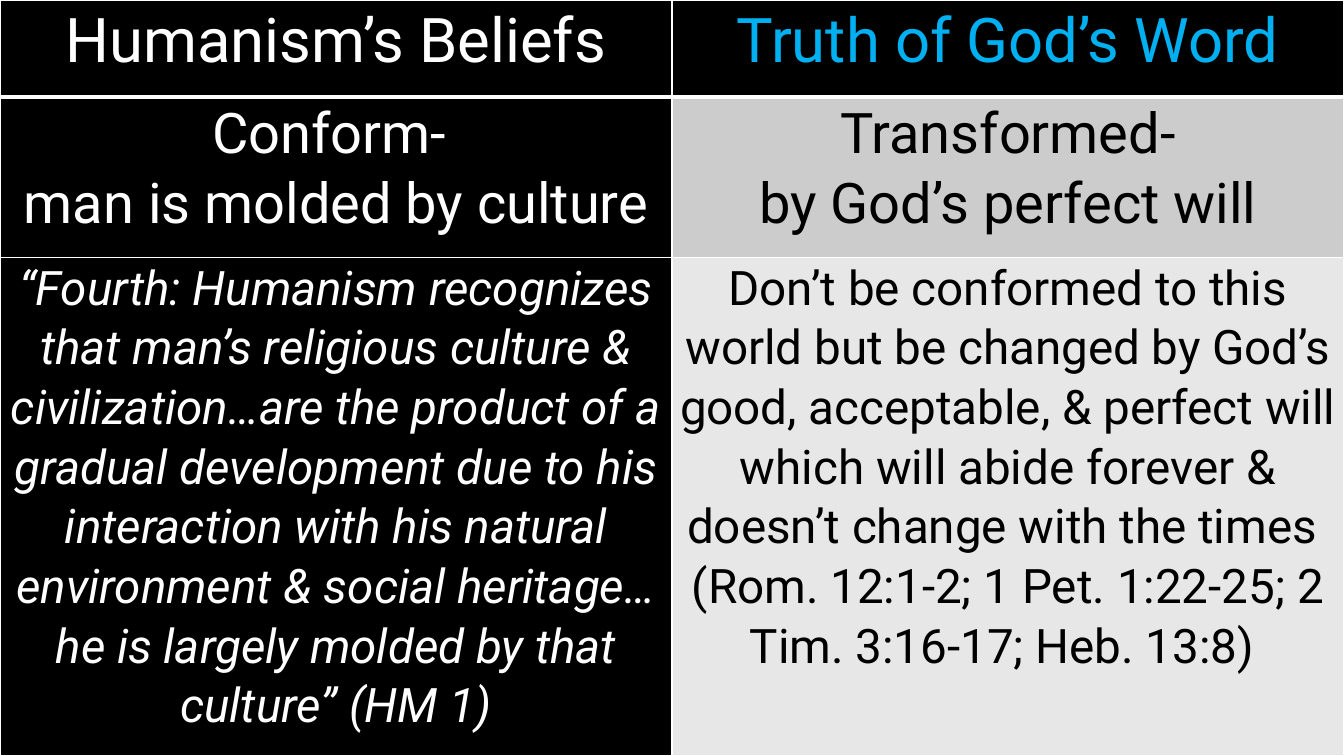
from lxml.etree import SubElement
from pptx import Presentation
from pptx.dml.color import RGBColor
from pptx.enum.text import PP_ALIGN
from pptx.oxml.ns import qn
from pptx.util import Cm, Pt

WHITE = RGBColor(0xFF, 0xFF, 0xFF)
BLACK = RGBColor(0x00, 0x00, 0x00)
BLUE = RGBColor(0x00, 0xB0, 0xF0)
MID_GRAY = RGBColor(0xCC, 0xCC, 0xCC)
LIGHT_GRAY = RGBColor(0xE7, 0xE7, 0xE7)

FONT = "Roboto"
PAGE_WIDTH, PAGE_HEIGHT = Cm(33.87), Cm(19.05)
ROW_HEIGHTS = [Cm(2.44), Cm(4.04), Cm(12.57)]
ROW_SIZES = [Pt(44), Pt(40), Pt(34)]
THIN, THICK = Pt(1), Pt(3)

# Each cell: paragraphs, text colour, fill colour, italic
COMPARISON = [
    [
        (["Humanism’s Beliefs"], WHITE, BLACK, False),
        (["Truth of God’s Word"], BLUE, BLACK, False),
    ],
    [
        (["Conform- ", "man is molded by culture"], WHITE, BLACK, False),
        (["Transformed-", "by God’s perfect will"], BLACK, MID_GRAY, False),
    ],
    [
        (["“Fourth: Humanism recognizes that man’s religious culture & "
          "civilization…are the product of a gradual development due to his "
          "interaction with his natural environment & social heritage… "
          "he is largely molded by that culture” (HM 1)"],
         WHITE, BLACK, True),
        (["Don’t be conformed to this world but be changed by God’s good, "
          "acceptable, & perfect will which will abide forever & doesn’t "
          "change with the times ",
          "(Rom. 12:1-2; 1 Pet. 1:22-25; 2 Tim. 3:16-17; Heb. 13:8) "],
         BLACK, LIGHT_GRAY, False),
    ],
]


def set_borders(cell, top, bottom):
    """Draw white borders; the side borders are always thin."""
    properties = cell._tc.get_or_add_tcPr()
    widths = {"a:lnL": THIN, "a:lnR": THIN, "a:lnT": top, "a:lnB": bottom}
    for tag, width in widths.items():
        line = SubElement(properties, qn(tag), w=str(width))
        fill = SubElement(line, qn("a:solidFill"))
        SubElement(fill, qn("a:srgbClr"), val=str(WHITE))


def write_cell(cell, paragraphs, size, color, italic):
    cell.margin_left = cell.margin_right = Cm(0.18)
    cell.margin_top = cell.margin_bottom = 0
    frame = cell.text_frame
    for index, text in enumerate(paragraphs):
        para = frame.add_paragraph() if index else frame.paragraphs[0]
        para.alignment = PP_ALIGN.CENTER
        para.line_spacing = 1.07
        span = para.add_run()
        span.text = text
        span.font.name = FONT
        span.font.size = size
        span.font.bold = False
        span.font.italic = italic
        span.font.color.rgb = color


def add_comparison(page):
    table = page.shapes.add_table(
        len(COMPARISON), 2, 0, 0, PAGE_WIDTH, PAGE_HEIGHT).table
    for row, height in zip(table.rows, ROW_HEIGHTS):
        row.height = height
    for r, cells in enumerate(COMPARISON):
        # The rule under the header is shared by the first two rows
        top = THICK if r == 1 else THIN
        bottom = THICK if r == 0 else THIN
        for c, (paragraphs, color, fill, italic) in enumerate(cells):
            cell = table.cell(r, c)
            set_borders(cell, top, bottom)
            cell.fill.solid()
            cell.fill.fore_color.rgb = fill
            write_cell(cell, paragraphs, ROW_SIZES[r], color, italic)


def main():
    deck = Presentation()
    deck.slide_width, deck.slide_height = PAGE_WIDTH, PAGE_HEIGHT

    # Black page without placeholders
    page = deck.slides.add_slide(deck.slide_layouts[6])
    page.background.fill.solid()
    page.background.fill.fore_color.rgb = BLACK

    # Two-column comparison filling the page
    add_comparison(page)
    deck.save("out.pptx")


if __name__ == "__main__":
    main()
